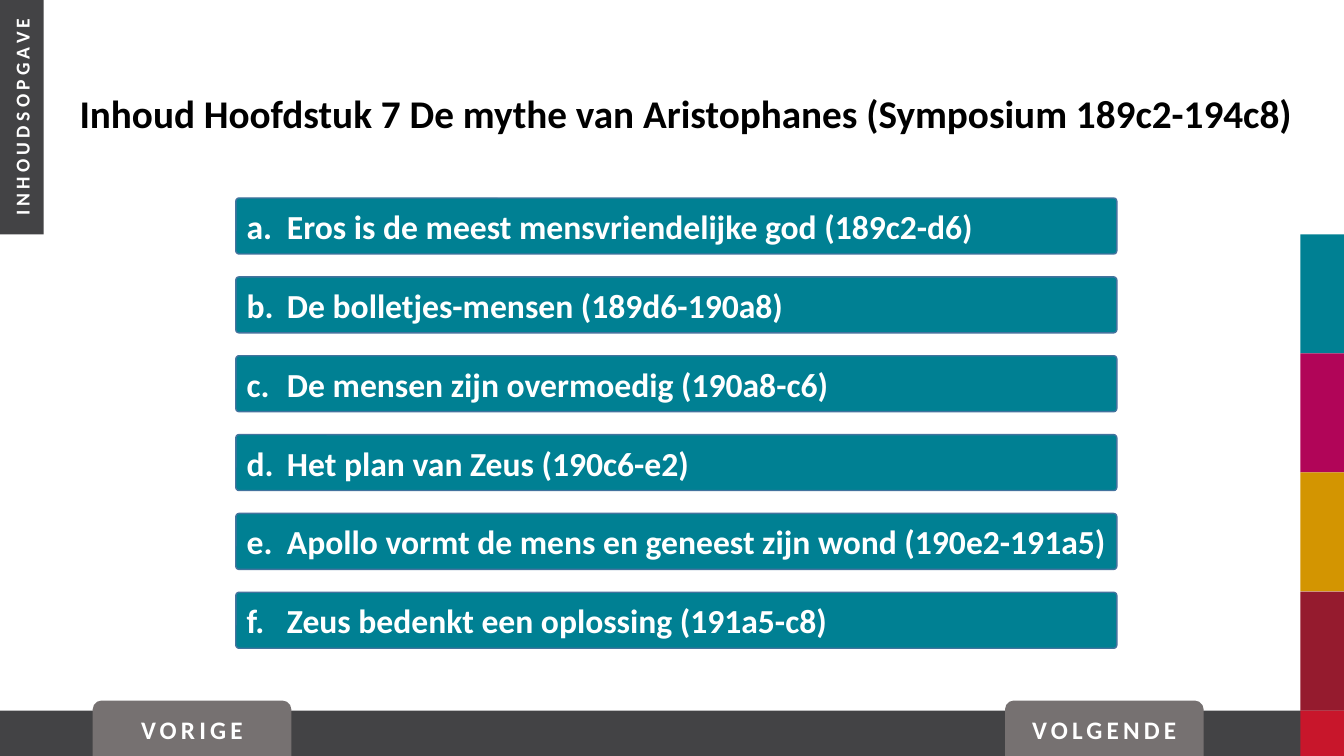
from pptx import Presentation
from pptx.dml.color import RGBColor
from pptx.enum.shapes import MSO_SHAPE
from pptx.enum.text import MSO_ANCHOR, PP_ALIGN
from pptx.oxml.ns import qn
from pptx.util import Inches, Pt
from lxml import etree

RECT = MSO_SHAPE.RECTANGLE
ROUNDED = MSO_SHAPE.ROUNDED_RECTANGLE
TOP_ROUNDED = MSO_SHAPE.ROUND_2_SAME_RECTANGLE
MIDDLE, TOP = MSO_ANCHOR.MIDDLE, MSO_ANCHOR.TOP
LEFT, CENTER = PP_ALIGN.LEFT, PP_ALIGN.CENTER

WHITE, BLACK = "FFFFFF", "000000"
DARK, GREY = "434345", "767171"
TEAL, BAR_LINE = "008093", "43739E"
TAB_COLOURS = [TEAL, "B10558", "D39501", "951B2E"]
CORNER_RED = "C8162B"

# Percentages of the slide's width and height
SIDE_W = 3.25
SIDE_TOP = 31
FOOTER_TOP = 94
BUTTON_TOP = 92.67
BAR_TOP, BAR_STEP = 26.2, 10.43

TITLE = "Inhoud Hoofdstuk 7 De mythe van Aristophanes (Symposium 189c2-194c8)"
SECTIONS = [
    "a. \tEros is de meest mensvriendelijke god (189c2-d6)",
    "b.\tDe bolletjes-mensen (189d6-190a8)",
    "c.\tDe mensen zijn overmoedig (190a8-c6)",
    "d.\tHet plan van Zeus (190c6-e2)",
    "e. \tApollo vormt de mens en geneest zijn wond (190e2-191a5)",
    "f. \tZeus bedenkt een oplossing (191a5-c8)",
]
BUTTONS = [("VORIGE", 6.9), ("VOLGENDE", 74.78)]


def rgb(colour):
    return RGBColor.from_string(colour)


class SlideBuilder:
    font = "Calibri"

    def __init__(self, prs):
        self.width, self.height = prs.slide_width, prs.slide_height
        self.s = prs.slides.add_slide(prs.slide_layouts[6])

    def box(self, x, y, w, h):
        return (int(self.width * x / 100), int(self.height * y / 100),
                int(self.width * w / 100), int(self.height * h / 100))

    def shape(self, kind, area, fill, line=None, corners=()):
        sp = self.s.shapes.add_shape(kind, *self.box(*area))
        sp.shadow.inherit = False
        sp.fill.solid()
        sp.fill.fore_color.rgb = rgb(fill)
        if line:
            sp.line.color.rgb = rgb(line)
            sp.line.width = Pt(1)
        else:
            sp.line.fill.background()
        for i, corner in enumerate(corners):
            sp.adjustments[i] = corner
        return sp

    def label(self, sp, text, size, colour=WHITE, align=CENTER,
              anchor=MIDDLE, spacing=None, tab=None):
        tf = sp.text_frame
        tf.word_wrap = True
        tf.vertical_anchor = anchor
        p = tf.paragraphs[0]
        p.alignment = align
        if tab:
            tabs = etree.SubElement(p._p.get_or_add_pPr(), qn("a:tabLst"))
            etree.SubElement(tabs, qn("a:tab"), pos=str(Inches(tab)), algn="l")
        p.font.name = self.font
        p.font.size = Pt(size)
        p.font.bold = True
        p.font.color.rgb = rgb(colour)
        r = p.add_run()
        r.text = text
        if spacing:
            r._r.get_or_add_rPr().set("spc", str(spacing * 100))

    def title(self, text, area):
        sp = self.s.shapes.add_textbox(*self.box(*area))
        self.label(sp, text, 28, BLACK, anchor=TOP)

    def section(self, text, y):
        sp = self.shape(ROUNDED, (17.55, y, 65.55, 7.4), TEAL, BAR_LINE, [0.056])
        self.label(sp, text, 24, align=LEFT, tab=0.4)

    def button(self, text, x):
        area = (x, BUTTON_TOP, 14.78, 100 - BUTTON_TOP)
        sp = self.shape(TOP_ROUNDED, area, GREY, corners=[0.159, 0])
        self.label(sp, text, 18, spacing=3)

    def side_label(self, text):
        sp = self.shape(RECT, (0, 0, SIDE_W, SIDE_TOP), DARK)
        self.label(sp, text, 14, spacing=3)
        sp.text_frame._txBody.bodyPr.set("vert", "vert270")


def main():
    prs = Presentation()
    prs.slide_width, prs.slide_height = Inches(13.33), Inches(7.5)
    page = SlideBuilder(prs)

    # Footer band and coloured side tabs
    footer_h = 100 - FOOTER_TOP
    page.shape(RECT, (0, FOOTER_TOP, 100, footer_h), DARK)
    side_x = 100 - SIDE_W
    tab_h = (FOOTER_TOP - SIDE_TOP) / len(TAB_COLOURS)
    for i, colour in enumerate(TAB_COLOURS):
        page.shape(RECT, (side_x, SIDE_TOP + i * tab_h, SIDE_W, tab_h), colour)
    page.shape(RECT, (side_x, FOOTER_TOP, SIDE_W, footer_h), CORNER_RED)
    page.side_label("INHOUDSOPGAVE")

    # Title and list of sections
    page.title(TITLE, (4.8, 11.2, 92.4, 7.6))
    for i, text in enumerate(SECTIONS):
        page.section(text, BAR_TOP + i * BAR_STEP)

    # Navigation buttons
    for text, x in BUTTONS:
        page.button(text, x)

    prs.save("out.pptx")


if __name__ == "__main__":
    main()
